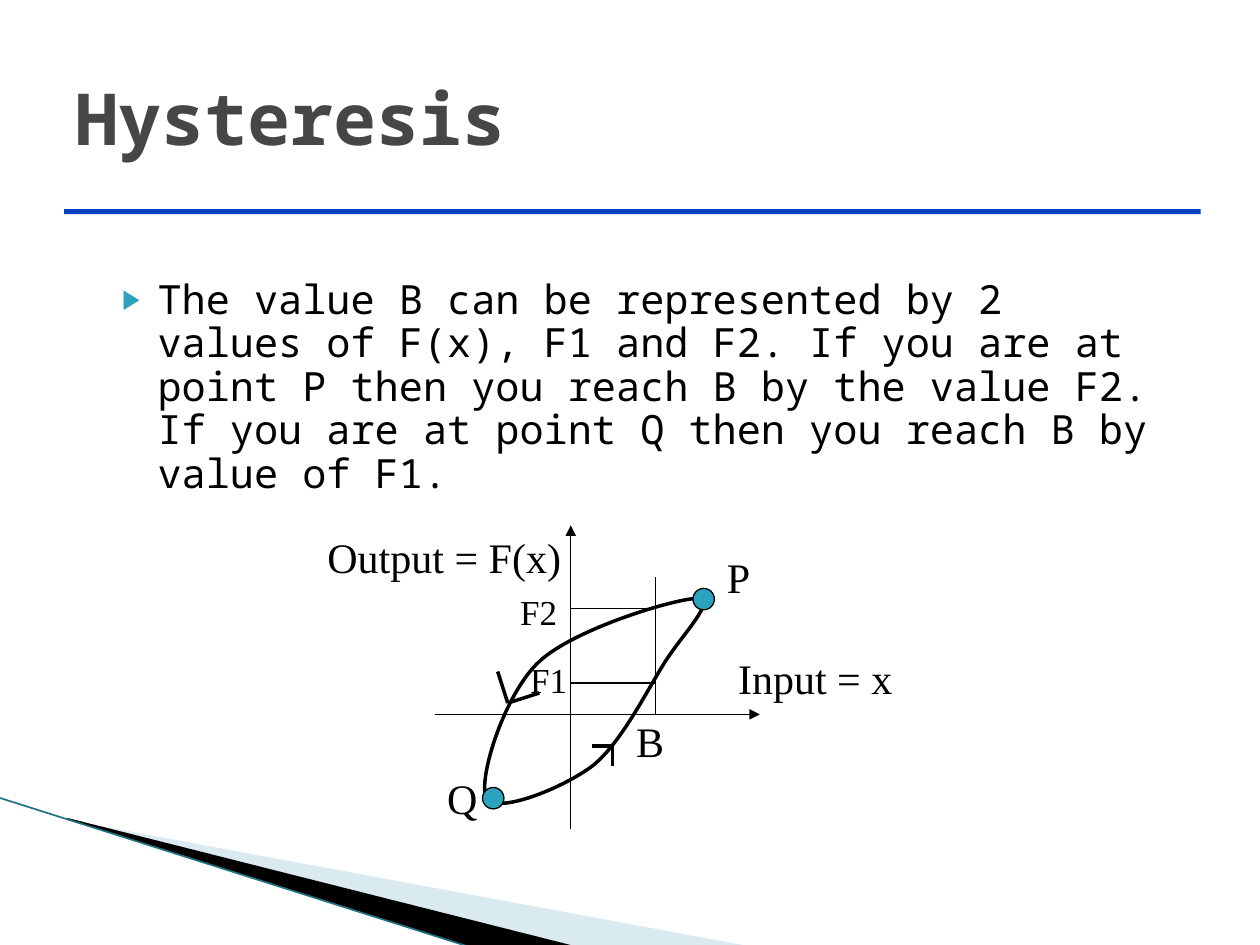
from dataclasses import dataclass

from lxml.etree import SubElement
from pptx import Presentation
from pptx.dml.color import RGBColor
from pptx.enum.shapes import MSO_CONNECTOR, MSO_SHAPE
from pptx.enum.text import MSO_ANCHOR, MSO_AUTO_SIZE, PP_ALIGN
from pptx.oxml.ns import qn
from pptx.util import Inches, Pt


@dataclass(frozen=True)
class Theme:
    title_font: str = "Noto Sans Mono"
    label_font: str = "Times New Roman"
    ink: str = "000000"
    title: str = "464646"
    accent: str = "2DA2BF"
    rule: str = "0040C0"
    wedge: str = "A0CBDC"
    edge: str = "1F7284"
    title_size: float = 41
    body_size: float = 23
    label_size: float = 24
    level_size: float = 20
    thin: float = 0.75
    edge_width: float = 0.95
    thick: float = 2


THEME = Theme()


def style_text(para, font, size, color, bold=False):
    for span in para.runs:
        span.font.name = font
        span.font.size = Pt(size)
        span.font.bold = bold
        span.font.color.rgb = RGBColor.from_string(color)


def place(shape, box):
    shape.left, shape.top, shape.width, shape.height = map(Inches, box)


def paint(shape, fill=None, line=None, width=THEME.thin):
    shape.shadow.inherit = False
    if fill:
        shape.fill.solid()
        shape.fill.fore_color.rgb = RGBColor.from_string(fill)
    else:
        shape.fill.background()
    if line:
        shape.line.color.rgb = RGBColor.from_string(line)
        shape.line.width = Pt(width)
    else:
        shape.line.fill.background()


def add_line(shapes, start, end, width=THEME.thin, color=THEME.ink, arrow=False):
    line = shapes.add_connector(MSO_CONNECTOR.STRAIGHT, *map(Inches, start + end))
    line.line.color.rgb = RGBColor.from_string(color)
    line.line.width = Pt(width)
    if arrow:
        SubElement(line.line._get_or_add_ln(), qn("a:tailEnd"), type="triangle")
    SubElement(line._element.spPr, qn("a:effectLst"))


def add_outline(shapes, points):
    start, *rest = [tuple(map(Inches, point)) for point in points]
    builder = shapes.build_freeform(*start)
    builder.add_line_segments(rest, close=True)
    return builder.convert_to_shape()


def add_curve(shapes, points):
    """Draw a closed Bezier curve: a start, then three points per segment."""
    curve = add_outline(shapes, points)
    segments = list(curve._element.iter(qn("a:lnTo")))
    for first in range(0, len(points) - 1, 3):
        cubic = segments[first].makeelement(qn("a:cubicBezTo"))
        segments[first].addprevious(cubic)
        for segment in segments[first:first + 3]:
            cubic.append(segment[0])
            segment.getparent().remove(segment)
    paint(curve, line=THEME.ink, width=THEME.thick)


def add_label(shapes, text, box, size=THEME.label_size):
    label = shapes.add_textbox(*map(Inches, box))
    frame = label.text_frame
    frame.text = text
    frame.word_wrap = False
    frame.auto_size = MSO_AUTO_SIZE.SHAPE_TO_FIT_TEXT
    style_text(frame.paragraphs[0], THEME.label_font, size, THEME.ink)


def add_corner(page, box):
    """Wedges sweeping from the left edge to the bottom edge."""
    left, top, width, height = box
    bottom = top + height
    pale = add_outline(page.shapes, [(left + 0.56, top + 0.18), (left + width, bottom),
                                     (left + 4.57, bottom), (left + 0.56, top + 0.17)])
    paint(pale, THEME.wedge)
    color = next(pale._element.iter(qn("a:srgbClr")))
    SubElement(color, qn("a:alpha"), val="40000")
    dark = add_outline(page.shapes, [(left + 0.54, top + 0.16), (left + 4.58, bottom),
                                     (left + 3.73, bottom), (left + 0.55, top + 0.17)])
    paint(dark, THEME.ink)
    add_line(page.shapes, (left, top), (left + 3.72, bottom), THEME.edge_width, THEME.edge)


def add_title(page, box):
    title = page.shapes.title
    place(title, box)
    frame = title.text_frame
    frame.text = "Hysteresis"
    frame.vertical_anchor = MSO_ANCHOR.MIDDLE
    frame.auto_size = MSO_AUTO_SIZE.NONE
    para = frame.paragraphs[0]
    para.alignment = PP_ALIGN.LEFT
    style_text(para, THEME.title_font, THEME.title_size, THEME.title, bold=True)


def add_rule(page, box):
    rule = page.shapes.add_shape(MSO_SHAPE.RECTANGLE, *map(Inches, box))
    paint(rule, THEME.rule)


def add_body(page, box):
    body = page.placeholders[1]
    place(body, box)
    frame = body.text_frame
    frame.text = ("The value B can be represented by 2 values of F(x), F1 and F2. "
                  "If you are at point P then you reach B by the value F2. "
                  "If you are at point Q then you reach B by value of F1.")
    frame.auto_size = MSO_AUTO_SIZE.NONE
    para = frame.paragraphs[0]
    para.line_spacing = 0.9
    para.space_before = Pt(0)
    # Triangle bullet with a hanging indent
    props = para._p.get_or_add_pPr()
    props.set("marL", str(Inches(0.4)))
    props.set("indent", str(Inches(-0.28)))
    SubElement(SubElement(props, qn("a:buClr")), qn("a:srgbClr"), val=THEME.accent)
    SubElement(props, qn("a:buSzPct"), val="68000")
    SubElement(props, qn("a:buChar"), char="▶")
    style_text(para, THEME.title_font, THEME.body_size, THEME.ink)


def add_diagram(page, box):
    """Hysteresis loop, with offsets measured from the corner of the box."""
    left, top, width, height = box
    shapes = page.shapes.add_group_shape().shapes

    def at(x, y):
        return left + x, top + y

    # Axes
    axis_x, axis_y, input_b = 2.03, 1.5, 2.7
    add_line(shapes, at(axis_x, height), at(axis_x, 0), arrow=True)
    add_line(shapes, at(0.95, axis_y), at(3.53, axis_y), arrow=True)

    # Loop
    loop = [(1.36, 2.16), (1.43, 2.3), (1.96, 2.09), (2.2, 1.91),
            (2.43, 1.73), (2.64, 1.3), (2.78, 1.08),
            (2.92, 0.86), (3.2, 0.58), (3.03, 0.58),
            (2.86, 0.58), (2.06, 0.82), (1.78, 1.08),
            (1.5, 1.34), (1.29, 2.02), (1.36, 2.16)]
    add_curve(shapes, [at(*point) for point in loop])

    # Direction marks on each branch
    for start, tip, end in [((2.2, 1.75), (2.36, 1.75), (2.36, 1.91)),
                            ((1.45, 1.16), (1.53, 1.41), (1.78, 1.33))]:
        add_line(shapes, at(*start), at(*tip), THEME.thick)
        add_line(shapes, at(*tip), at(*end), THEME.thick)

    # Guides from B to its two output levels
    add_line(shapes, at(input_b, axis_y), at(input_b, 0.41))
    for level in (1.25, 0.66):
        add_line(shapes, at(input_b, level), at(axis_x, level))

    # Labels, each box a little wider than its text
    for text, x, y, label_width in [("Input = x", 3.26, 0.96, 1.43), ("Output = F(x)", 0, 0, 2.06),
                                    ("B", 2.45, 1.46, 0.42), ("P", 3.17, 0.16, 0.39),
                                    ("Q", 0.95, 1.91, 0.44)]:
        add_label(shapes, text, (*at(x, y), label_width, 0.5))
    for text, x, y in [("F1", 1.61, 1.01), ("F2", 1.53, 0.47)]:
        add_label(shapes, text, (*at(x, y), 0.52, 0.43), THEME.level_size)

    # End points Q and P
    for corner in [(1.33, 2.08), (3, 0.5)]:
        dot = shapes.add_shape(MSO_SHAPE.OVAL, *map(Inches, (*at(*corner), 0.17, 0.17)))
        paint(dot, THEME.accent, THEME.ink)


def main():
    deck = Presentation()
    deck.slide_width, deck.slide_height = Inches(10), Inches(7.5)
    page = deck.slides.add_slide(deck.slide_layouts[1])
    add_corner(page, (-0.01, 6.33, 5.96, 1.18))
    add_title(page, (0.5, 0.3, 9, 1.25))
    add_body(page, (0.75, 2.17, 8.5, 1.58))
    add_diagram(page, (2.5, 4.17, 4.69, 2.41))
    add_rule(page, (0.51, 1.66, 9.02, 0.04))
    deck.save("out.pptx")


if __name__ == "__main__":
    main()
